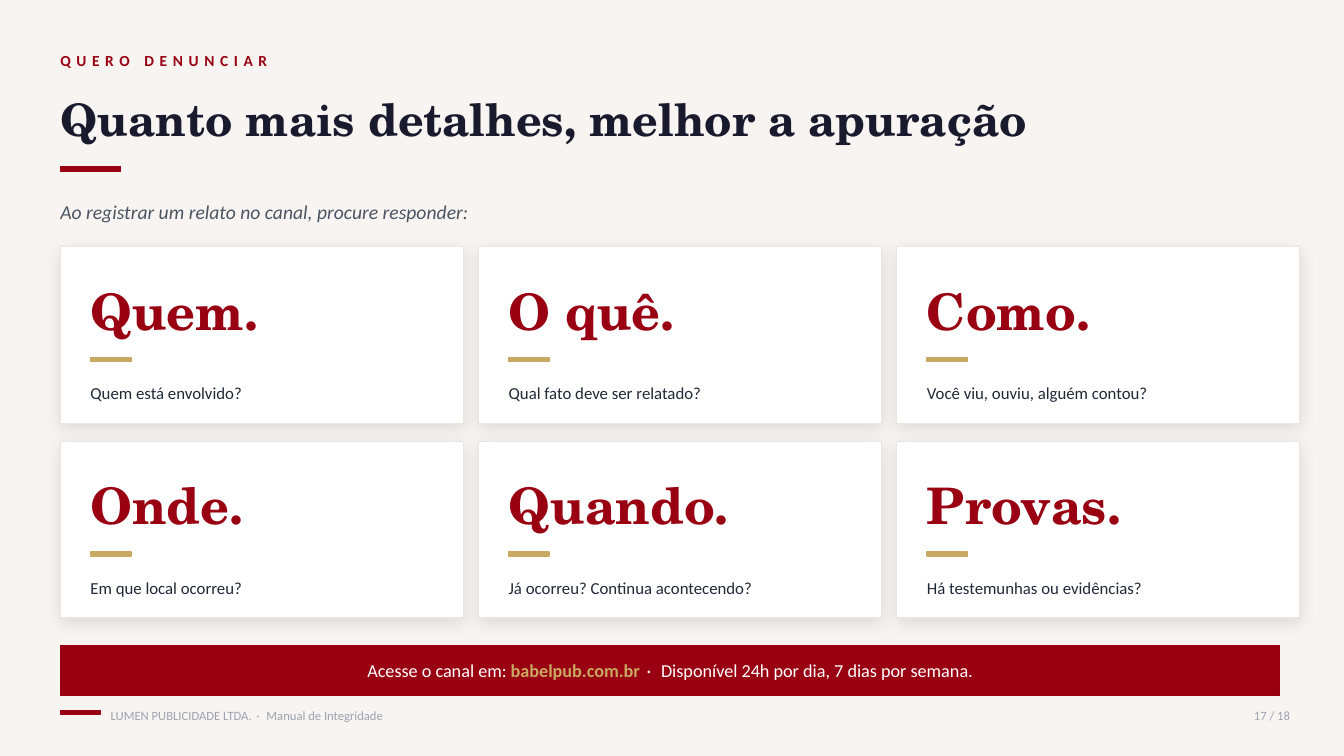
from lxml.etree import SubElement
from pptx import Presentation
from pptx.dml.color import RGBColor
from pptx.enum.shapes import MSO_SHAPE
from pptx.enum.text import MSO_ANCHOR, PP_ALIGN
from pptx.oxml.ns import qn
from pptx.util import Cm, Pt

CREAM = RGBColor(0xF7, 0xF4, 0xF1)
CRIMSON = RGBColor(0x99, 0x00, 0x11)
GOLD = RGBColor(0xC9, 0xA9, 0x61)
NAVY = RGBColor(0x1A, 0x1A, 0x2E)
SLATE = RGBColor(0x4B, 0x55, 0x63)
INK = RGBColor(0x1F, 0x29, 0x37)
GREY = RGBColor(0x9C, 0xA3, 0xAF)
BORDER = RGBColor(0xE8, 0xE6, 0xE3)
WHITE = RGBColor(0xFF, 0xFF, 0xFF)

SERIF = "TeX Gyre Schola"
SANS = "Calibri"
MARGIN = 1.52

presentation = Presentation()
presentation.slide_width = Cm(33.87)
presentation.slide_height = Cm(19.05)
slide = presentation.slides.add_slide(presentation.slide_layouts[6])
slide.background.fill.solid()
slide.background.fill.fore_color.rgb = CREAM


def add_block(left, top, width, height, fill, line=None, line_width=1):
    block = slide.shapes.add_shape(
        MSO_SHAPE.RECTANGLE, Cm(left), Cm(top), Cm(width), Cm(height))
    block.shadow.inherit = False
    block.fill.solid()
    block.fill.fore_color.rgb = fill
    block.line.color.rgb = line or fill
    block.line.width = Pt(line_width)
    return block


def add_text(left, top, width, height, parts, size, font=SANS,
             align=PP_ALIGN.LEFT, bold=False, italic=False):
    """Add one line of text; parts holds (text, colour, letter spacing in points)."""
    box = slide.shapes.add_textbox(Cm(left), Cm(top), Cm(width), Cm(height))
    frame = box.text_frame
    frame.word_wrap = True
    frame.vertical_anchor = MSO_ANCHOR.MIDDLE
    frame.margin_left = frame.margin_top = frame.margin_right = frame.margin_bottom = 0
    paragraph = frame.paragraphs[0]
    paragraph.alignment = align
    for text, colour, spacing in parts:
        run = paragraph.add_run()
        run.text = text
        run.font.name = font
        run.font.size = Pt(size)
        run.font.bold = bold
        run.font.italic = italic
        run.font.color.rgb = colour
        if spacing:
            run.font._element.set("spc", str(int(spacing * 100)))
    return paragraph


# Heading
add_text(MARGIN, 1.14, 20.32, 0.76, [("QUERO DENUNCIAR", CRIMSON, 4)], 11, bold=True)
add_text(MARGIN, 1.9, 30.48, 2.16,
         [("Quanto mais detalhes, melhor a apuração", NAVY, 0)], 32, SERIF, bold=True)
add_block(MARGIN, 4.19, 1.52, 0.13, CRIMSON)
add_text(MARGIN, 4.7, 30.48, 1.27,
         [("Ao registrar um relato no canal, procure responder:", SLATE, 0)], 14, italic=True)

# Question cards
questions = [
    ("Quem.", "Quem está envolvido?"),
    ("O quê.", "Qual fato deve ser relatado?"),
    ("Como.", "Você viu, ouviu, alguém contou?"),
    ("Onde.", "Em que local ocorreu?"),
    ("Quando.", "Já ocorreu? Continua acontecendo?"),
    ("Provas.", "Há testemunhas ou evidências?"),
]
COLUMNS = 3
for index, (keyword, question) in enumerate(questions):
    row, column = divmod(index, COLUMNS)
    left = MARGIN + column * 10.54
    top = 6.22 + row * 4.9
    inner_left = left + 0.76

    card = add_block(left, top, 10.16, 4.45, WHITE, BORDER, 0.75)
    effects = card._element.spPr.find(qn("a:effectLst"))
    shadow = SubElement(effects, qn("a:outerShdw"), blurRad=str(Pt(12)),
                        dist=str(Pt(3)), dir="5400000", algn="bl", rotWithShape="0")
    shadow_colour = SubElement(shadow, qn("a:srgbClr"), val="000000")
    SubElement(shadow_colour, qn("a:alpha"), val="10000")

    add_text(inner_left, top + 0.51, 8.64, 2.16, [(keyword, CRIMSON, 0)], 36, SERIF, bold=True)
    add_block(inner_left, top + 2.79, 1.02, 0.1, GOLD)
    add_text(inner_left, top + 3.05, 8.64, 1.27, [(question, INK, 0)], 12)

# Channel banner
add_block(MARGIN, 16.26, 30.73, 1.27, CRIMSON)
channel = add_text(MARGIN, 16.26, 30.73, 1.27, [
    ("Acesse o canal em: ", WHITE, 0),
    ("babelpub.com.br", GOLD, 0),
    (" · ", WHITE, 2),
    ("Disponível 24h por dia, 7 dias por semana.", WHITE, 0),
], 13, align=PP_ALIGN.CENTER)
channel.runs[1].font.bold = True

# Footer
add_block(MARGIN, 17.91, 1.02, 0.08, CRIMSON)
add_text(2.79, 17.65, 20.32, 0.76, [
    ("LUMEN PUBLICIDADE LTDA.", GREY, 0),
    (" · ", GREY, 1.4),
    ("Manual de Integridade", GREY, 0),
], 9)
add_text(29.97, 17.65, 2.54, 0.76, [("17 / 18", GREY, 0)], 9, align=PP_ALIGN.RIGHT)

presentation.save("out.pptx")
